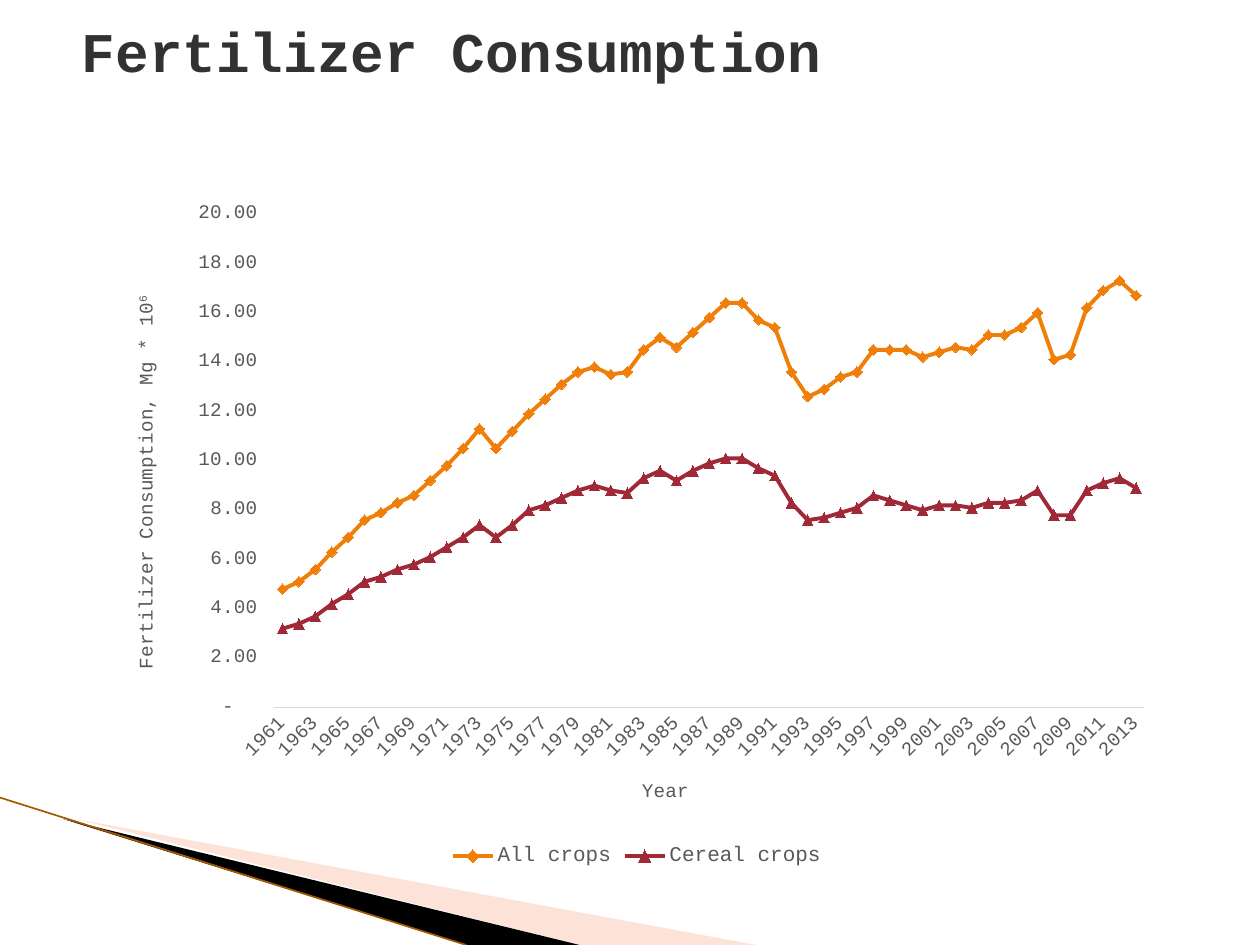
from lxml import etree
from pptx import Presentation
from pptx.chart.data import CategoryChartData
from pptx.dml.color import RGBColor
from pptx.enum.chart import XL_CHART_TYPE, XL_LEGEND_POSITION, XL_MARKER_STYLE, XL_TICK_MARK
from pptx.enum.shapes import MSO_CONNECTOR
from pptx.enum.text import MSO_ANCHOR, PP_ALIGN
from pptx.oxml.ns import qn
from pptx.util import Inches, Pt

LINE_MARKERS = XL_CHART_TYPE.LINE_MARKERS
BOTTOM = XL_LEGEND_POSITION.BOTTOM
NO_TICK = XL_TICK_MARK.NONE
STRAIGHT = MSO_CONNECTOR.STRAIGHT
TOP = MSO_ANCHOR.TOP
LEFT = PP_ALIGN.LEFT
FONT = "Courier New"
COLORS = {
    "title": "323232", "label": "595959", "axis": "D9D9D9", "blush": "FCB79B",
    "black": "000000", "edge": "A65800", "orange": "F07F09", "red": "9F2936",
}
NUMBER_FORMAT = '_(* #,##0.00_);_(* \\(#,##0.00\\);_(* "-"??_);_(@_)'
YEARS = [str(year) for year in range(1961, 2014)]
ALL_CROPS = [
    4.8, 5.1, 5.6, 6.3, 6.9, 7.6, 7.9, 8.3, 8.6, 9.2, 9.8, 10.5, 11.3, 10.5,
    11.2, 11.9, 12.5, 13.1, 13.6, 13.8, 13.5, 13.6, 14.5, 15, 14.6, 15.2, 15.8,
    16.4, 16.4, 15.7, 15.4, 13.6, 12.6, 12.9, 13.4, 13.6, 14.5, 14.5, 14.5, 14.2,
    14.4, 14.6, 14.5, 15.1, 15.1, 15.4, 16, 14.1, 14.3, 16.2, 16.9, 17.3, 16.7,
]
CEREAL_CROPS = [
    3.2, 3.4, 3.7, 4.2, 4.6, 5.1, 5.3, 5.6, 5.8, 6.1, 6.5, 6.9, 7.4, 6.9,
    7.4, 8, 8.2, 8.5, 8.8, 9, 8.8, 8.7, 9.3, 9.6, 9.2, 9.6, 9.9,
    10.1, 10.1, 9.7, 9.4, 8.3, 7.6, 7.7, 7.9, 8.1, 8.6, 8.4, 8.2, 8,
    8.2, 8.2, 8.1, 8.3, 8.3, 8.4, 8.8, 7.8, 7.8, 8.8, 9.1, 9.3, 8.9,
]
SERIES = [
    ("All crops", ALL_CROPS, "orange", XL_MARKER_STYLE.DIAMOND),
    ("Cereal crops", CEREAL_CROPS, "red", XL_MARKER_STYLE.TRIANGLE),
]


class SlideBuilder:
    """Draws styled elements on a slide grid of 100 columns by 75 rows."""

    def __init__(self, deck):
        self.cell = Inches(0.1)
        deck.slide_width, deck.slide_height = 100 * self.cell, 75 * self.cell
        self.page = deck.slides.add_slide(deck.slide_layouts[5])

    def grid(self, *lengths):
        return [round(length * self.cell) for length in lengths]

    def color(self, name):
        return RGBColor.from_string(COLORS[name])

    def style(self, font, size, color, bold=False):
        font.name, font.size, font.bold = FONT, Pt(size), bold
        font.color.rgb = self.color(color)

    def title(self, text, *place):
        box = self.page.shapes.title
        box.left, box.top, box.width, box.height = self.grid(*place)
        frame = box.text_frame
        frame.text = text
        frame.vertical_anchor = TOP
        frame.margin_top = self.grid(1.3)[0]
        para = frame.paragraphs[0]
        para.alignment = LEFT
        self.style(para.runs[0].font, 32, "title", True)

    def wedge(self, points, color, opacity=100):
        builder = self.page.shapes.build_freeform(*points[0], scale=self.cell)
        builder.add_line_segments(points[1:], close=True)
        shape = builder.convert_to_shape()
        shape.shadow.inherit = False
        shape.line.fill.background()
        shape.fill.solid()
        shape.fill.fore_color.rgb = self.color(color)
        if opacity < 100:
            tint = shape.fill._xPr.find(".//" + qn("a:srgbClr"))
            etree.SubElement(tint, qn("a:alpha"), val=str(opacity * 1000))

    def line(self, start, end, color, width):
        edge = self.page.shapes.add_connector(STRAIGHT, *self.grid(*start, *end))
        edge.line.color.rgb = self.color(color)
        edge.line.width = Pt(width)
        etree.SubElement(edge._element.spPr, qn("a:effectLst"))

    def axis(self, axis, title, superscript=""):
        axis.has_major_gridlines = False
        axis.major_tick_mark = axis.minor_tick_mark = NO_TICK
        self.style(axis.tick_labels.font, 11, "label")
        para = axis.axis_title.text_frame.paragraphs[0]
        para.text = title
        if superscript:
            span = para.add_run()
            span.text = superscript
            span._r.get_or_add_rPr().set("baseline", "30000")
        for span in para.runs:
            self.style(span.font, 11, "label")

    def plot_area(self, chart, **shares):
        area = chart._chartSpace.chart.plotArea
        for old in area.findall(qn("c:layout")):
            area.remove(old)
        layout = etree.Element(qn("c:layout"))
        area.insert(0, layout)
        manual = etree.SubElement(layout, qn("c:manualLayout"))
        settings = {"layoutTarget": "inner", "xMode": "edge", "yMode": "edge", **shares}
        for name, value in settings.items():
            etree.SubElement(manual, qn("c:" + name), val=str(value))

    def line_chart(self, categories, series, *place):
        data = CategoryChartData(number_format="0.0")
        data.categories = categories
        for name, values, _, _ in series:
            data.add_series(name, values)
        chart = self.page.shapes.add_chart(LINE_MARKERS, *self.grid(*place), data).chart
        chart.has_title = False
        self.style(chart.font, 10, "black")
        chart.plots[0].vary_by_categories = False
        for line, (_, _, color, marker) in zip(chart.plots[0].series, series):
            line.smooth = False
            line.format.line.color.rgb = self.color(color)
            line.format.line.width = Pt(2.25)
            line.marker.style, line.marker.size = marker, 6
            line.marker.format.fill.solid()
            line.marker.format.fill.fore_color.rgb = self.color(color)
            line.marker.format.line.color.rgb = self.color(color)

        years, amounts = chart.category_axis, chart.value_axis
        self.axis(years, "Year")
        years.format.line.color.rgb = self.color("axis")
        years.format.line.width = Pt(0.75)
        years._element.txPr.bodyPr.set("rot", "-2700000")
        skip = etree.Element(qn("c:tickLblSkip"), val="2")
        years._element.find(qn("c:noMultiLvlLbl")).addprevious(skip)

        self.axis(amounts, "Fertilizer Consumption, Mg * 10", "6")
        amounts.minimum_scale, amounts.maximum_scale, amounts.major_unit = 0, 20, 2
        amounts.format.line.fill.background()
        amounts.tick_labels.number_format = NUMBER_FORMAT
        amounts.tick_labels.number_format_is_linked = False

        chart.has_legend = True
        chart.legend.position = BOTTOM
        chart.legend.include_in_layout = False
        self.style(chart.legend.font, 12, "label")
        self.plot_area(chart, x=0.157, y=0.035, w=0.823, h=0.723)


def main():
    deck = Presentation()
    slide = SlideBuilder(deck)
    slide.title("Fertilizer Consumption", 5.5, 0, 90, 12.5)
    slide.wedge([(5.5, 65), (59.5, 75), (45.6, 75)], "blush", 40)
    slide.wedge([(5.3, 64.9), (45.5, 75), (37.2, 75)], "black")
    slide.line((0, 63.3), (37, 75), "edge", 0.95)
    slide.line_chart(YEARS, SERIES, 8.6, 15.1, 83.9, 54.2)
    deck.save("out.pptx")


if __name__ == "__main__":
    main()
